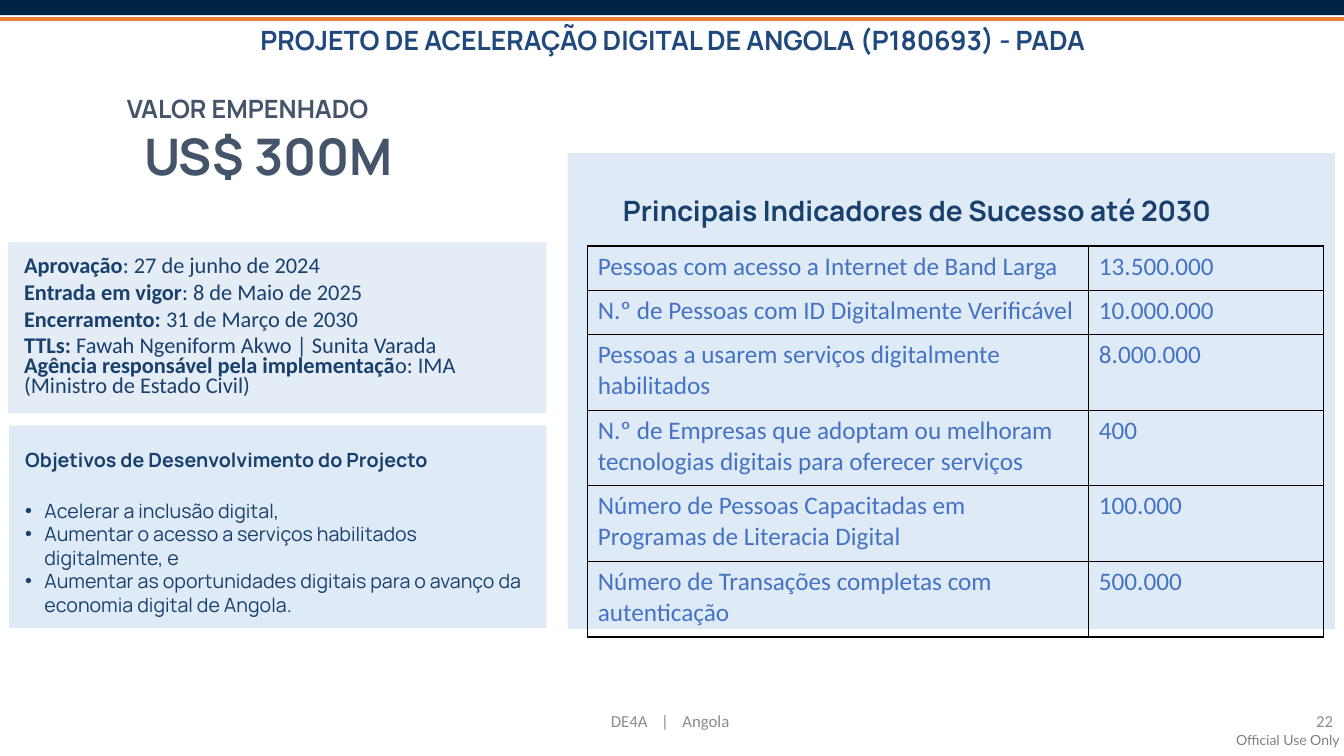
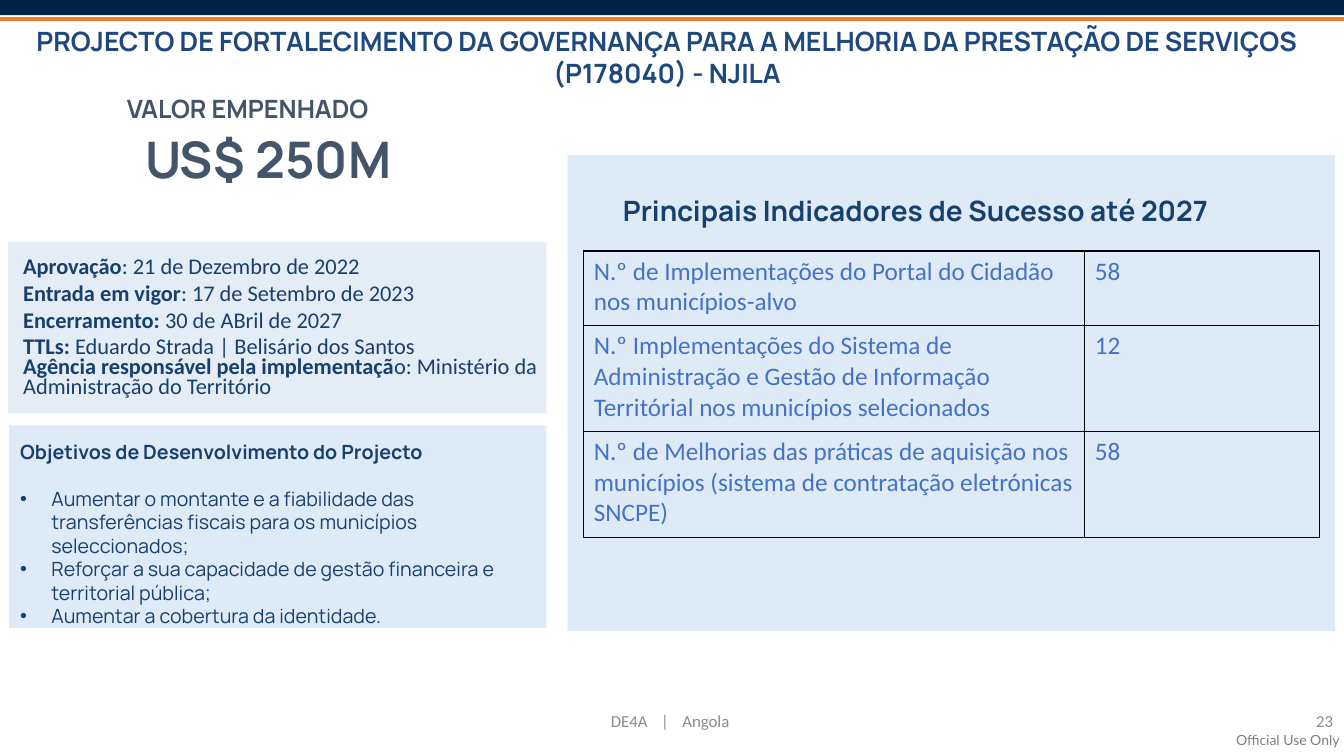
import pptx
import pptx.util
import pptx.dml.color
import pptx.enum.shapes
import pptx.enum.text
import pptx.oxml.ns
from lxml import etree

Inches, Pt = pptx.util.Inches, pptx.util.Pt
RGBColor = pptx.dml.color.RGBColor
ALIGN = pptx.enum.text.PP_ALIGN
ANCHOR = pptx.enum.text.MSO_ANCHOR
qn = pptx.oxml.ns.qn

# Colours
NAVY = RGBColor(0x00, 0x23, 0x45)
ORANGE = RGBColor(0xED, 0x7D, 0x31)
TITLE_BLUE = RGBColor(0x1F, 0x49, 0x7D)
TEXT_BLUE = RGBColor(0x17, 0x40, 0x6D)
SLATE = RGBColor(0x44, 0x54, 0x6A)
CELL_BLUE = RGBColor(0x44, 0x72, 0xC4)
PANEL = RGBColor(0xDE, 0xEB, 0xF7)
FACTS_PANEL = RGBColor(0xDC, 0xE6, 0xF2)
GREY = RGBColor(0x8C, 0x8C, 0x8C)
BLACK = RGBColor(0, 0, 0)

# Text styles
TITLE = {"name": "Manrope", "size": Pt(19), "bold": True, "color": TITLE_BLUE}
LABEL = {"name": "Manrope", "size": Pt(18), "bold": True, "color": SLATE}
AMOUNT = {**LABEL, "size": Pt(36)}
HEADING = {"name": "Manrope", "size": Pt(20), "bold": True, "color": TEXT_BLUE}
GOAL_HEADING = {**HEADING, "size": Pt(14)}
GOAL = {**GOAL_HEADING, "bold": False}
FACT = {"name": "Calibri", "size": Pt(16), "bold": False, "color": TEXT_BLUE}
FACT_LABEL = {**FACT, "bold": True}
CELL = {"name": "Calibri", "size": Pt(18), "bold": False, "color": CELL_BLUE}
FOOTER = {"name": "Calibri", "size": Pt(12), "bold": False, "color": GREY}
NOTICE = {"name": "Lato", "size": Pt(10), "bold": False, "color": BLACK}

SLIDE_WIDTH = 13.33

PROJECTS = [
    {
        "title": "PROJETO DE ACELERAÇÃO DIGITAL DE ANGOLA (P180693) - PADA",
        "title_box": (0.01, 0.19, 13.33, 0.42),
        "amount": "US$ 300M", "amount_box": (1.33, 1.19, 2.88, 0.71),
        "facts": [
            ("Aprovação", ": 27 de junho de 2024"),
            ("Entrada em vigor", ": 8 de Maio de 2025"),
            ("Encerramento: ", "31 de Março de 2030"),
            ("TTLs: ", "Fawah Ngeniform Akwo | Sunita Varada"),
            ("Agência responsável pela implementaçã", "o: IMA (Ministro de Estado Civil)"),
        ],
        "facts_insets": (0.16, 0.09, 0.36, 0),
        "goals": [
            "Acelerar a inclusão digital,",
            "Aumentar o acesso a serviços habilitados digitalmente, e",
            "Aumentar as oportunidades digitais para o avanço da economia digital de Angola.",
        ],
        "goals_insets": (0.16, 0.11, 0.1, 0), "goals_indent": 0.19, "goals_gap": 19.2,
        "panel_top": 1.52, "year": "2030", "table_at": (5.83, 2.44),
        "indicators": [
            ("Pessoas com acesso a Internet de Band Larga", "13.500.000", 0.44),
            ("N.º de Pessoas com ID Digitalmente Verificável", "10.000.000", 0.44),
            ("Pessoas a usarem serviços digitalmente habilitados", "8.000.000", 0.75),
            ("N.º de Empresas que adoptam ou melhoram tecnologias digitais "
             "para oferecer serviços", "400", 0.75),
            ("Número de Pessoas Capacitadas em Programas de Literacia Digital", "100.000", 0.75),
            ("Número de Transações completas com autenticação", "500.000", 0.75),
        ],
        "number": "22",
    },
    {
        "title": "PROJECTO DE FORTALECIMENTO DA GOVERNANÇA PARA A MELHORIA "
                 "DA PRESTAÇÃO DE SERVIÇOS (P178040) - NJILA",
        "title_box": (0.15, 0.19, 12.93, 0.74),
        "amount": "US$ 250M", "amount_box": (1.34, 1.22, 2.99, 0.71),
        "facts": [
            ("Aprovação", ": 21 de Dezembro de 2022"),
            ("Entrada em vigor", ": 17 de Setembro de 2023"),
            ("Encerramento: ", "30 de ABril de 2027"),
            ("TTLs: ", "Eduardo Strada | Belisário dos Santos"),
            ("Agência responsável pela implementaçã",
             "o: Ministério da Administração do Território"),
        ],
        "facts_insets": (0.15, 0.1, 0.07, 0),
        "goals": [
            "Aumentar o montante e a fiabilidade das transferências fiscais "
            "para os municípios seleccionados;",
            "Reforçar a sua capacidade de gestão financeira e territorial pública;",
            "Aumentar a cobertura da identidade.",
        ],
        "goals_insets": (0.11, 0.14, 0.1, 0), "goals_indent": 0.31, "goals_gap": 16.8,
        "panel_top": 1.54, "year": "2027", "table_at": (5.79, 2.49),
        "indicators": [
            ("N.º de Implementações do Portal do Cidadão nos municípios-alvo", "58", 0.74),
            ("N.º Implementações do Sistema de Administração e Gestão de Informação "
             "Territórial nos municípios selecionados", "12", 1.05),
            ("N.º de Melhorias das práticas de aquisição nos municípios "
             "(sistema de contratação eletrónicas SNCPE)", "58", 1.05),
        ],
        "number": "23",
    },
]


def inches(box):
    return [Inches(length) for length in box]


def set_all(target, values):
    for name, value in values.items():
        setattr(target, name, value)


def add_span(para, text, style):
    span = para.add_run()
    span.text = text
    set_all(span.font, {key: value for key, value in style.items() if key != "color"})
    span.font.color.rgb = style["color"]
    return span


def set_alpha(element, percent):
    for color in element.iter(qn("a:srgbClr")):
        etree.SubElement(color, qn("a:alpha"), val=str(percent * 1000))


def set_frame(frame, insets=(0.1, 0.05, 0.1, 0.05), anchor=ANCHOR.MIDDLE, wrap=True):
    sides = ("margin_left", "margin_top", "margin_right", "margin_bottom")
    set_all(frame, dict(zip(sides, inches(insets))))
    set_all(frame, {"word_wrap": wrap, "vertical_anchor": anchor,
                    "auto_size": pptx.enum.text.MSO_AUTO_SIZE.NONE})


def add_text(page, box, text, style, align=ALIGN.LEFT, **frame_format):
    frame = page.shapes.add_textbox(*inches(box)).text_frame
    set_frame(frame, **frame_format)
    para = frame.paragraphs[0]
    para.alignment = align
    add_span(para, text, style)
    return para


def add_panel(page, box, color):
    panel = page.shapes.add_shape(pptx.enum.shapes.MSO_SHAPE.RECTANGLE, *inches(box))
    panel.shadow.inherit = False
    panel.fill.solid()
    panel.fill.fore_color.rgb = color
    panel.line.fill.background()
    return panel


def add_bands(page):
    """Top band with its orange rule."""
    add_panel(page, (0, 0, SLIDE_WIDTH, 0.15), NAVY)
    rule = page.shapes.add_connector(pptx.enum.shapes.MSO_CONNECTOR.STRAIGHT,
                                     *inches((0, 0.19, SLIDE_WIDTH, 0.19)))
    rule.line.color.rgb = ORANGE
    rule.line.width = Pt(3)
    etree.SubElement(rule._element.spPr, qn("a:effectLst"))


def add_footer(page, number):
    para = add_text(page, (5.96, 6.95, 1.5, 0.4), "DE4A\t|\tAngola", FOOTER)
    stops = etree.SubElement(para._p.get_or_add_pPr(), qn("a:tabLst"))
    for position in (0.5, 0.71):
        etree.SubElement(stops, qn("a:tab"), pos=str(Inches(position)), algn="l")
    add_text(page, (10.32, 6.95, 3, 0.4), number, FOOTER, ALIGN.RIGHT)
    notice = add_text(page, (12.26, 7.26, 1.03, 0.17), "Official Use Only", NOTICE,
                      insets=(0, 0, 0, 0), anchor=ANCHOR.TOP, wrap=False)
    set_alpha(notice._p, 50)


def place(shape, box):
    set_all(shape, dict(zip(("left", "top", "width", "height"), inches(box))))


def fill_title(page, box, text):
    title = page.shapes.title
    place(title, box)
    set_frame(title.text_frame)
    para = title.text_frame.paragraphs[0]
    para.alignment = ALIGN.CENTER
    add_span(para, text, TITLE)


def fill_goals(page, box, project):
    """Development goals: a heading and a bulleted list."""
    body = page.placeholders[1]
    place(body, box)
    body.fill.solid()
    body.fill.fore_color.rgb = PANEL
    frame = body.text_frame
    set_frame(frame, project["goals_insets"])
    indent = Inches(project["goals_indent"])
    lines = ["Objetivos de Desenvolvimento do Projecto"] + project["goals"]
    for index, line in enumerate(lines):
        para = frame.add_paragraph() if index else frame.paragraphs[0]
        margin = indent if index else 0
        properties = para._p.get_or_add_pPr()
        properties.set("marL", str(margin))
        properties.set("indent", str(-margin))
        if index:
            etree.SubElement(properties, qn("a:buFont"), typeface="Arial")
            etree.SubElement(properties, qn("a:buChar"), char="•")
        else:
            etree.SubElement(properties, qn("a:buNone"))
        gap = project["goals_gap"] if index == 1 else 0
        set_all(para, {"space_before": Pt(gap), "alignment": ALIGN.LEFT})
        add_span(para, line, GOAL if index else GOAL_HEADING)


def add_facts(page, box, facts, insets):
    """Key dates and people, with bold labels."""
    panel = add_panel(page, box, FACTS_PANEL)
    set_alpha(panel._element, 75)
    frame = panel.text_frame
    set_frame(frame, insets, ANCHOR.TOP)
    for index, (label, value) in enumerate(facts):
        para = frame.add_paragraph() if index else frame.paragraphs[0]
        para.alignment = ALIGN.LEFT
        add_span(para, label, FACT_LABEL)
        add_span(para, value, FACT)
    para.line_spacing = Pt(14)


def set_borders(cell):
    properties = cell._tc.get_or_add_tcPr()
    for side in ("a:lnL", "a:lnR", "a:lnT", "a:lnB"):
        border = etree.SubElement(properties, qn(side), w=str(Pt(1)))
        fill = etree.SubElement(border, qn("a:solidFill"))
        etree.SubElement(fill, qn("a:srgbClr"), val=str(BLACK))


def add_indicators(page, box, project):
    """Panel with the success indicators table."""
    add_panel(page, box, PANEL)
    add_text(page, (box[0] + 0.45, 1.87, 6.41, 0.44),
             "Principais Indicadores de Sucesso até " + project["year"], HEADING)
    rows, widths = project["indicators"], (4.97, 2.33)
    height = sum(row[2] for row in rows)
    table = page.shapes.add_table(len(rows), len(widths), *inches(
        (*project["table_at"], sum(widths), height))).table
    set_all(table, {"first_row": False, "horz_banding": False})
    for column, width in zip(table.columns, widths):
        column.width = Inches(width)
    for row, (name, target, row_height) in zip(table.rows, rows):
        row.height = Inches(row_height)
        for cell, text in zip(row.cells, (name, target)):
            set_borders(cell)
            cell.fill.background()
            add_span(cell.text_frame.paragraphs[0], text, CELL)


def add_project_page(deck, project):
    page = deck.slides.add_slide(deck.slide_layouts[1])
    add_bands(page)
    fill_title(page, project["title_box"], project["title"])
    add_text(page, (1.16, 0.88, 2.87, 0.4), "VALOR EMPENHADO", LABEL)
    add_text(page, project["amount_box"], project["amount"], AMOUNT)
    add_facts(page, (0.08, 2.4, 5.34, 1.7), project["facts"], project["facts_insets"])
    fill_goals(page, (0.09, 4.22, 5.33, 2.01), project)
    add_indicators(page, (5.63, project["panel_top"], 7.61, 4.72), project)
    add_footer(page, project["number"])


def main():
    deck = pptx.Presentation()
    set_all(deck, {"slide_width": Inches(SLIDE_WIDTH), "slide_height": Inches(7.5)})
    for project in PROJECTS:
        add_project_page(deck, project)
    deck.save("out.pptx")


if __name__ == "__main__":
    main()
